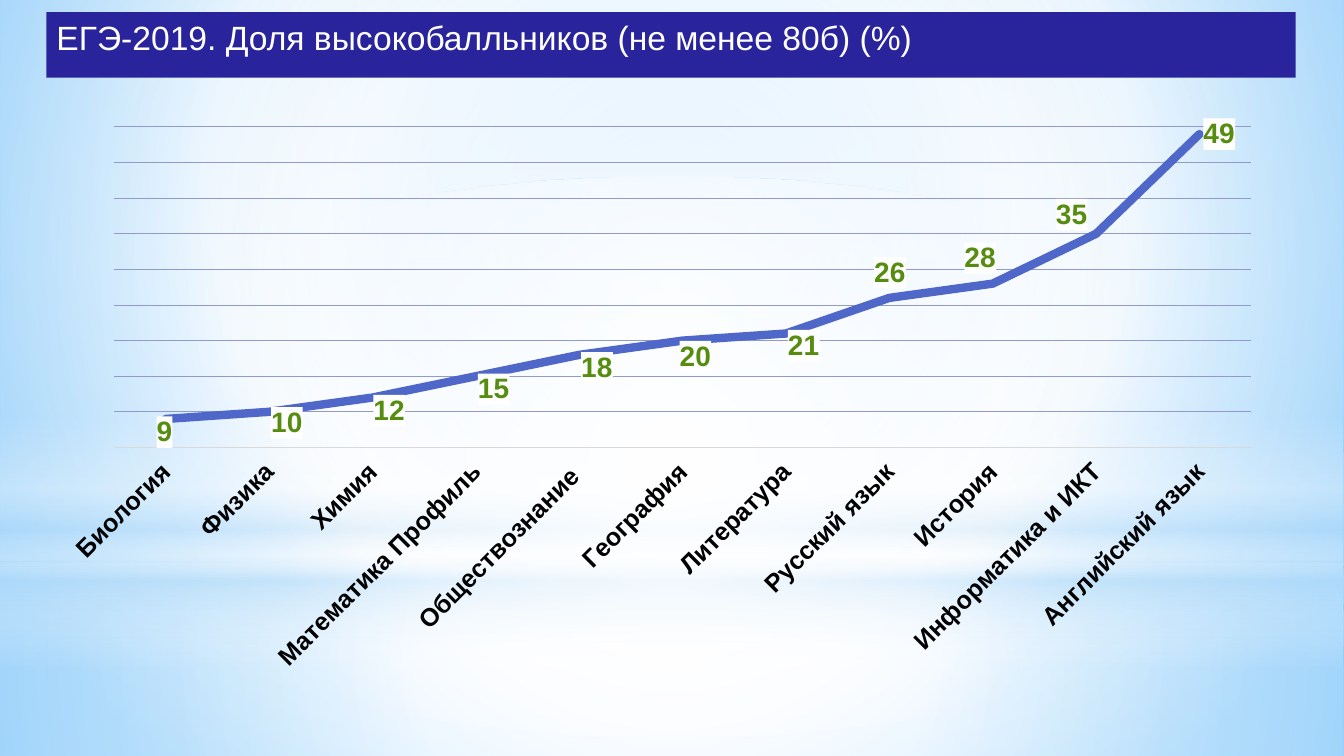
"""Build a slide with a line chart of the share of high exam scores by subject."""
from lxml.etree import SubElement
from pptx import Presentation
from pptx.chart.data import CategoryChartData
from pptx.dml.color import RGBColor
from pptx.enum.chart import XL_CHART_TYPE, XL_LABEL_POSITION, XL_MARKER_STYLE, XL_TICK_LABEL_POSITION, XL_TICK_MARK
from pptx.enum.shapes import MSO_SHAPE
from pptx.enum.text import MSO_ANCHOR, MSO_AUTO_SIZE, PP_ALIGN
from pptx.oxml import parse_xml
from pptx.oxml.ns import nsdecls, qn
from pptx.util import Inches, Pt


def color(value):
    """Return the colour of a hex string."""
    return RGBColor.from_string(value)


def set_gradient(fill, element, stops, focus=None):
    """Fill an element with stops, circular around focus or else vertical."""
    stop_xml = "".join(
        f'<a:gs pos="{position * 1000}"><a:srgbClr val="{value}"><a:alpha val="{opacity * 1000}"/></a:srgbClr></a:gs>'
        for position, value, opacity in stops)
    if focus:
        sides = " ".join(f'{side}="{amount * 1000}"' for side, amount in zip("ltrb", focus))
        direction = f'<a:path path="circle"><a:fillToRect {sides}/></a:path>'
    else:
        direction = '<a:lin ang="5400000" scaled="0"/>'
    fill.solid()
    solid = element.xpath(".//p:bgPr/a:solidFill | ./p:spPr/a:solidFill")[0]
    gradient = parse_xml(f'<a:gradFill {nsdecls("a")} rotWithShape="1"><a:gsLst>{stop_xml}</a:gsLst>{direction}</a:gradFill>')
    solid.getparent().replace(solid, gradient)


presentation = Presentation()
presentation.slide_width, presentation.slide_height = Inches(13.33), Inches(7.5)
slide = presentation.slides.add_slide(presentation.slide_layouts[5])
set_gradient(slide.background.fill, slide._element,
             [(0, "9ED5FF", 100), (60, "FFFFFF", 100), (100, "5BB9FF", 100)], (20, 10, 20, 60))

center = (50, 50, 50, 50)
backdrops = [
    (MSO_SHAPE.RECTANGLE, 5.58, 1.92, center, [(0, "FFFFFF", 91), (37, "FFFFFF", 76), (100, "B4DCFA", 79)]),
    (MSO_SHAPE.RECTANGLE, 0, 5.58, center, [(0, "FFFFFF", 89), (48, "FFFFFF", 62), (100, "B4DCFA", 79)]),
    (MSO_SHAPE.RECTANGLE, 4.12, 2.5, None, [(0, "FFFFFF", 0), (29, "FFFFFF", 30), (45, "B4DCFA", 40),
                                            (55, "FFFFFF", 26), (65, "B4DCFA", 60), (100, "FFFFFF", 0)]),
    (MSO_SHAPE.OVAL, 1.75, 5.58, center, [(0, "FFFFFF", 100), (56, "FFFFFF", 0)]),
]
for kind, top, height, focus, stops in backdrops:
    shape = slide.shapes.add_shape(kind, 0, Inches(top), presentation.slide_width, Inches(height))
    shape.shadow.inherit = False
    shape.line.fill.background()
    set_gradient(shape.fill, shape._element, stops, focus)

title = slide.shapes.title
slide.shapes._spTree.append(title._element)
title_place = {"left": 0.46, "top": 0.12, "width": 12.39, "height": 0.65}
for name, value in title_place.items():
    setattr(title, name, Inches(value))
title.fill.solid()
title.fill.fore_color.rgb = color("2A249C")
title.text_frame.text = "ЕГЭ-2019. Доля высокобалльников (не менее 80б) (%)"
frame_format = {"word_wrap": True, "auto_size": MSO_AUTO_SIZE.NONE, "vertical_anchor": MSO_ANCHOR.TOP,
                "margin_left": Inches(0.1), "margin_right": Inches(0.1),
                "margin_top": Inches(0.05), "margin_bottom": Inches(0.05)}
for name, value in frame_format.items():
    setattr(title.text_frame, name, value)
paragraph = title.text_frame.paragraphs[0]
paragraph.alignment = PP_ALIGN.LEFT

shares = {"Биология": 9, "Физика": 10, "Химия": 12, "Математика Профиль": 15, "Обществознание ": 18,
          "География": 20, "Литература": 21, "Русский язык": 26, "История": 28,
          "Информатика и ИКТ": 35, "Английский язык": 49}
chart_data = CategoryChartData()
chart_data.categories = list(shares)
chart_data.add_series("Series 1", list(shares.values()))
chart_width, chart_height = 12.21, 5.57
chart = slide.shapes.add_chart(XL_CHART_TYPE.LINE, Inches(0.44), Inches(1.15),
                               Inches(chart_width), Inches(chart_height), chart_data).chart
chart.has_legend = False
chart.has_title = False
plot = chart.plots[0]
plot.vary_by_categories = False

category_axis = chart.category_axis
category_axis.major_tick_mark = XL_TICK_MARK.NONE
category_axis.tick_label_position = XL_TICK_LABEL_POSITION.LOW
category_axis.format.line.color.rgb = color("D9D9D9")
category_axis.format.line.width = Pt(0.75)
value_axis = chart.value_axis
axis_format = {"minimum_scale": 5, "maximum_scale": 50, "major_unit": 5, "has_major_gridlines": True, "visible": False}
for name, value in axis_format.items():
    setattr(value_axis, name, value)
value_axis.major_gridlines.format.line.color.rgb = color("919ACA")
value_axis.major_gridlines.format.line.width = Pt(0.75)

series = plot.series[0]
series.smooth = False
series.marker.style = XL_MARKER_STYLE.NONE
series.format.line.color.rgb = color("4E67C8")
series.format.line.width = Pt(6)
series.format.line._get_or_add_ln().set("cap", "rnd")

labels = series.data_labels
labels.show_value = True
labels.position = XL_LABEL_POSITION.RIGHT
label_shifts = [(-0.13, 0.13), (-0.02, 0.11), (-0.03, 0.13), (-0.02, 0.13), (-0.02, 0.13), (-0.07, 0.16),
                (-0.02, 0.12), (-0.19, -0.25), (-0.32, -0.25), (-0.44, -0.19)]
point_labels = [series.points[index].data_label for index in range(len(label_shifts))]

label_font = {"size": 20, "bold": True, "color": "568D11"}
fonts = [(paragraph.font, {"size": 24, "bold": False, "color": "FFFFFF"}),
         (chart.font, {"size": 10, "bold": False, "color": "000000"}),
         (category_axis.tick_labels.font, {"size": 18, "bold": True, "color": "000000"})]
fonts += [(label.font, label_font) for label in [labels, *point_labels]]
for font, font_format in fonts:
    font.name = "Arial"
    font.size = Pt(font_format["size"])
    font.bold = font_format["bold"]
    font.color.rgb = color(font_format["color"])
category_axis._element.find(qn("c:txPr")).find(qn("a:bodyPr")).set("rot", "-2700000")

plot_layout = {"layoutTarget": "inner", "xMode": "edge", "yMode": "edge", "x": 0.69 / chart_width,
               "y": 0.11 / chart_height, "w": 11.28 / chart_width, "h": 3.18 / chart_height}
plot_area = chart._chartSpace.chart.plotArea
for old_layout in plot_area.findall(qn("c:layout")):
    plot_area.remove(old_layout)
layouts = [(plot_area, 0, plot_layout)]
for label, (shift_x, shift_y) in zip(point_labels, label_shifts):
    label.position = XL_LABEL_POSITION.RIGHT
    layouts.append((label._dLbl, 1, {"x": shift_x / chart_width, "y": shift_y / chart_height}))
for parent, position, values in layouts:
    layout = parse_xml(f'<c:layout {nsdecls("c")}><c:manualLayout/></c:layout>')
    for name, value in values.items():
        SubElement(layout[0], qn(f"c:{name}")).set("val", str(value))
    parent.insert(position, layout)

for text_properties in labels._element.xpath(".//c:txPr"):
    text_properties.addprevious(parse_xml(
        f'<c:spPr {nsdecls("c", "a")}><a:solidFill><a:srgbClr val="FFFFFF"/></a:solidFill></c:spPr>'))

presentation.save("out.pptx")
